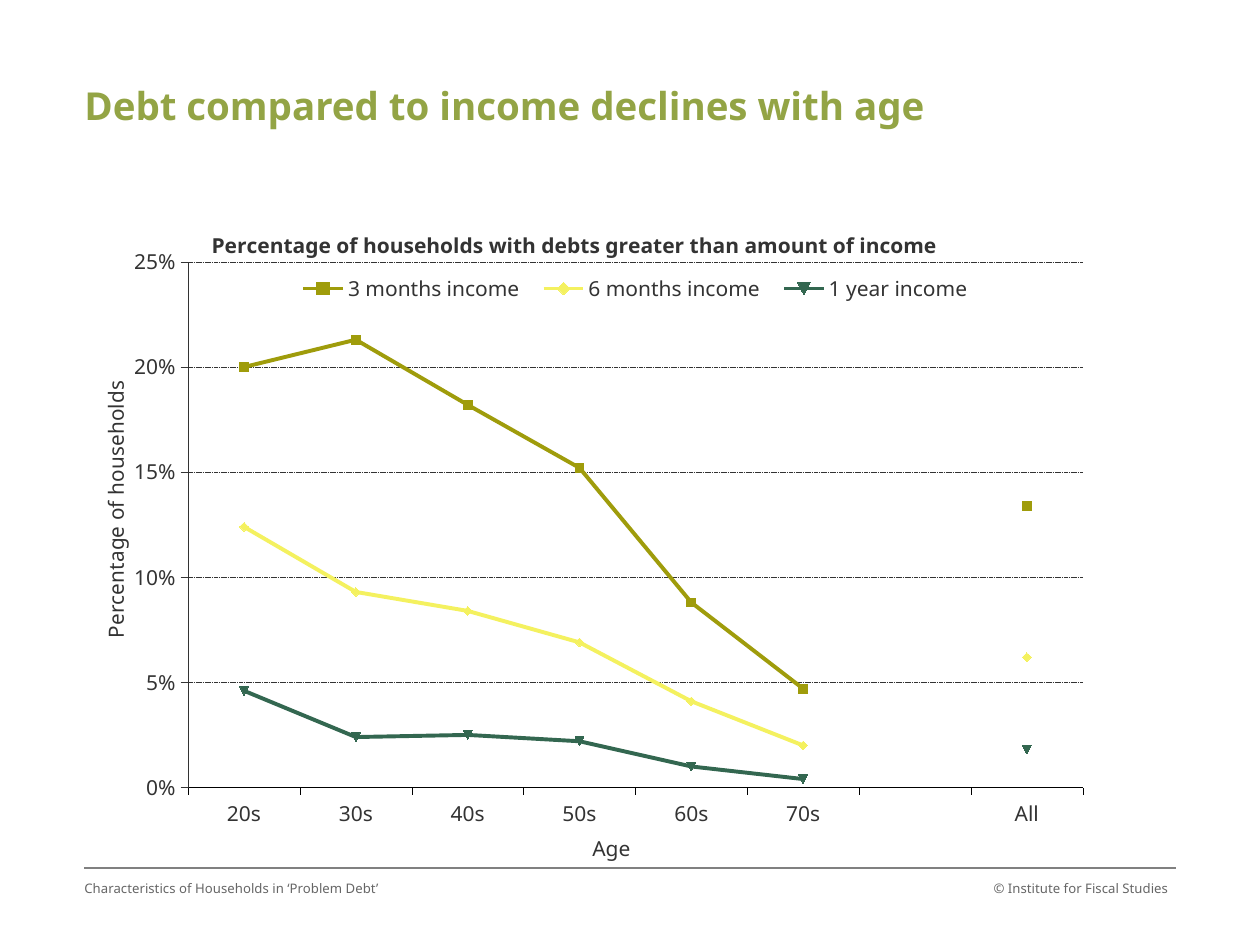
from dataclasses import dataclass
from typing import Any, Optional

from lxml import etree
from pptx import Presentation
from pptx import util as u
from pptx.chart.data import CategoryChartData
from pptx.dml.color import RGBColor
from pptx.enum import chart as ch, dml, shapes, text
from pptx.oxml.ns import qn

WIDTH, HEIGHT = 10, 7.5
LEFT, RIGHT = 0.067 * WIDTH, 0.933 * WIDTH
FONT = "Noto Sans"
INK, GREY = "333333", "666666"


@dataclass
class Label:
    words: str
    left: float
    top: float
    width: float
    height: float
    size: float
    color: str
    bold: bool = False
    align: Any = text.PP_ALIGN.LEFT


@dataclass
class DebtLine:
    name: str
    shares: tuple[Optional[float], ...]
    color: str


AGES = ("20s", "30s", "40s", "50s", "60s", "70s", "", "All")
DEBT_LINES = (
    DebtLine("3 months income",
             (0.2, 0.213, 0.182, 0.152, 0.088, 0.047, None, 0.134), "9F9C0B"),
    DebtLine("6 months income",
             (0.124, 0.093, 0.084, 0.069, 0.041, 0.02, None, 0.062), "F4F15F"),
    DebtLine("1 year income",
             (0.046, 0.024, 0.025, 0.022, 0.01, 0.004, None, 0.018), "336750"),
)
LABELS = (
    Label("Debt compared to income declines with age",
          LEFT, 0.65, 7.17, 0.44, 22, "93A445", True),
    Label("Characteristics of Households in ‘Problem Debt’",
          LEFT, 6.99, 3.17, 0.4, 7.5, GREY),
    Label("© Institute for Fiscal Studies",
          RIGHT - 1.79, 6.99, 1.73, 0.4, 7.5, GREY, align=text.PP_ALIGN.RIGHT),
)


def rgb(color: str) -> RGBColor:
    return RGBColor.from_string(color)


def style_font(font: Any, size: float, color: str, bold: bool = False) -> None:
    font.name, font.size, font.bold = FONT, u.Pt(size), bold
    font.color.rgb = rgb(color)


def style_line(line: Any, color: str, width: float) -> None:
    line.color.rgb = rgb(color)
    line.width = u.Pt(width)


def draw_label(slide: Any, label: Label) -> None:
    box = slide.shapes.add_textbox(*map(u.Inches, (label.left, label.top, label.width, label.height)))
    frame = box.text_frame
    frame.word_wrap = True
    frame.margin_left = frame.margin_right = frame.margin_top = frame.margin_bottom = 0
    frame.text = label.words
    frame.paragraphs[0].alignment = label.align
    style_font(frame.paragraphs[0].runs[0].font, label.size, label.color, label.bold)


def draw_footer_rule(slide: Any) -> None:
    y = u.Inches(6.89)
    rule = slide.shapes.add_connector(shapes.MSO_CONNECTOR.STRAIGHT,
                                      u.Inches(LEFT), y, u.Inches(RIGHT), y)
    style_line(rule.line, "808080", 0.75)
    etree.SubElement(rule._element.spPr, qn("a:effectLst"))


def place(part: Any, **shares: Any) -> None:
    """Fix a chart part at shares of the chart's size."""
    for old in part.findall(qn("c:layout")):
        part.remove(old)
    layout = etree.Element(qn("c:layout"))
    manual = etree.SubElement(layout, qn("c:manualLayout"))
    for tag, value in shares.items():
        etree.SubElement(manual, qn(f"c:{tag}")).set("val", str(value))
    heads = (qn("c:tx"), qn("c:legendPos"))
    part.insert(sum(child.tag in heads for child in part), layout)


def set_title(title: Any, words: str, x: float, y: float, bold: bool = False) -> None:
    title.text_frame.text = words
    style_font(title.text_frame.paragraphs[0].runs[0].font, 12, INK, bold)
    place(title._element, xMode="edge", yMode="edge", x=x, y=y)


def style_axis(axis: Any, color: str) -> None:
    axis.major_tick_mark = ch.XL_TICK_MARK.OUTSIDE
    axis.minor_tick_mark = ch.XL_TICK_MARK.NONE
    style_line(axis.format.line, color, 0.25)
    style_font(axis.tick_labels.font, 12, INK)


def draw_chart(slide: Any) -> None:
    data = CategoryChartData(number_format="0%")
    data.categories = AGES
    for debt in DEBT_LINES:
        data.add_series(debt.name, debt.shares)
    chart = slide.shapes.add_chart(
        ch.XL_CHART_TYPE.LINE_MARKERS, u.Inches(LEFT), u.Inches(1.7),
        u.Inches(RIGHT - LEFT), u.Inches(5.2), data).chart
    style_font(chart.font, 12, INK)
    plot = chart.plots[0]
    plot.vary_by_categories = False

    # Lines and markers
    for series, debt in zip(plot.series, DEBT_LINES):
        series.smooth = False
        style_line(series.format.line, debt.color, 2.25)
        marker = series.marker
        marker.style, marker.size = ch.XL_MARKER_STYLE.AUTOMATIC, 5
        marker.format.fill.solid()
        marker.format.fill.fore_color.rgb = rgb(debt.color)
        style_line(marker.format.line, debt.color, 0.75)

    # Axes and gridlines
    ages, households = chart.category_axis, chart.value_axis
    style_axis(ages, "000000")
    style_axis(households, INK)
    households.minimum_scale, households.maximum_scale = 0, 0.25
    households.major_unit = 0.05
    households.tick_labels.number_format = "0%"
    households.tick_labels.number_format_is_linked = False
    grid = households.major_gridlines.format.line
    style_line(grid, INK, 0.25)
    grid.dash_style = dml.MSO_LINE.SQUARE_DOT

    # Titles, legend and plot area
    chart.has_title = True
    set_title(chart.chart_title,
              "Percentage of households with debts greater than amount of income",
              0.113, 0.017, bold=True)
    set_title(ages.axis_title, "Age", 0.462, 0.95)
    set_title(households.axis_title, "Percentage of households", 0.01, 0.257)
    upright = households.axis_title.text_frame._txBody.bodyPr
    upright.set("rot", "-5400000")
    upright.set("vert", "horz")
    chart.has_legend = True
    chart.legend.position = ch.XL_LEGEND_POSITION.TOP
    chart.legend.include_in_layout = False
    style_font(chart.legend.font, 12, INK)
    place(chart.legend._element, xMode="edge", yMode="edge",
          x=0.185, y=0.09, w=0.64, h=0.05)
    place(chart._chartSpace.chart.plotArea, layoutTarget="inner", xMode="edge", yMode="edge",
          x=0.095, y=0.074, w=0.82, h=0.813)


def main() -> None:
    deck = Presentation()
    deck.slide_width, deck.slide_height = u.Inches(WIDTH), u.Inches(HEIGHT)
    slide = deck.slides.add_slide(deck.slide_layouts[6])
    draw_footer_rule(slide)
    for label in LABELS:
        draw_label(slide, label)
    draw_chart(slide)
    deck.save("out.pptx")


if __name__ == "__main__":
    main()
